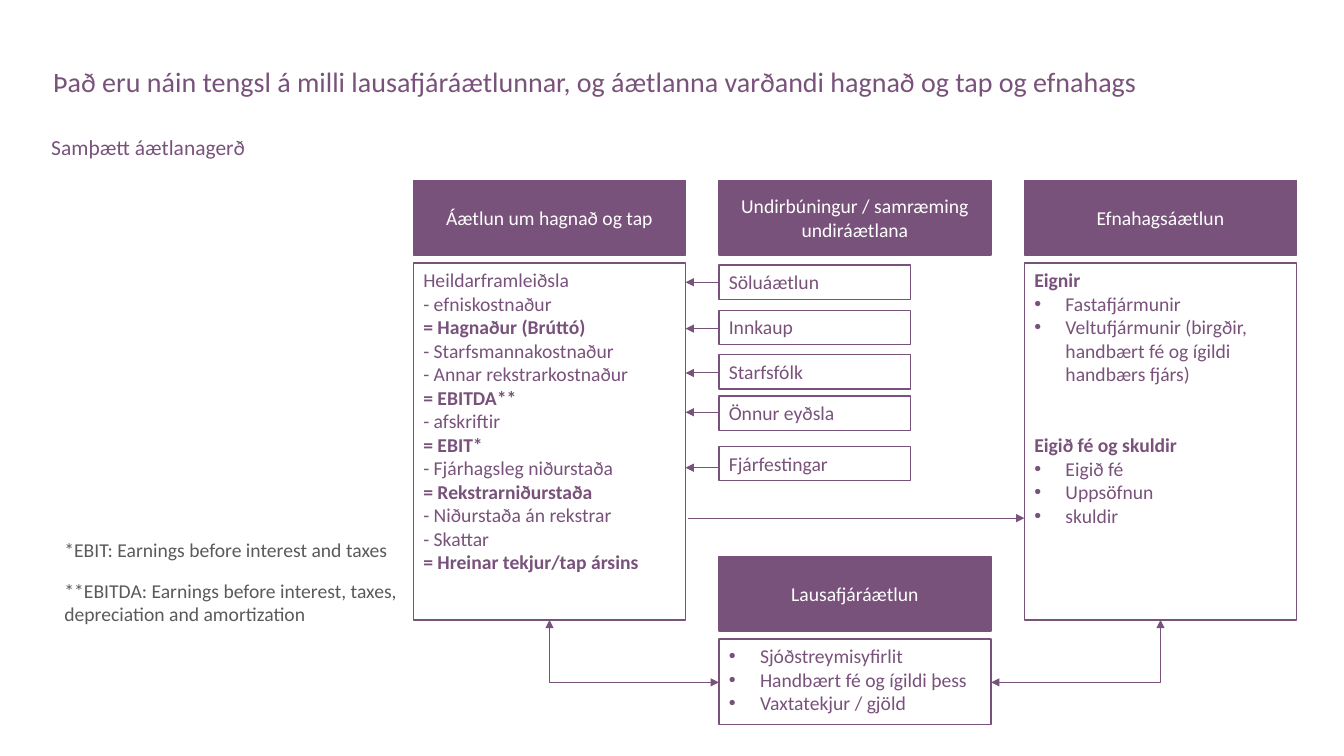
import pptx
import pptx.dml.color
import pptx.enum.shapes
import pptx.enum.text
import pptx.oxml
import pptx.oxml.ns
import pptx.util
from pptx.util import Inches

COLOURS = {"plum": "79527B", "white": "FFFFFF", "grey": "595A59"}
FONT = "Calibri"
qn = pptx.oxml.ns.qn


def colour(name):
    return pptx.dml.color.RGBColor.from_string(COLOURS[name])


def add_child(parent, tag, **attributes):
    child = parent.makeelement(qn(tag), attributes)
    parent.append(child)
    return child


def write(para, text, size=14, ink="plum", bold=False, bullet=False,
          align=None, before=None, spacing=None):
    """Fill one paragraph with text in the given format."""
    if bullet:
        props = para._p.get_or_add_pPr()
        props.set("marL", str(Inches(0.31)))
        props.set("indent", str(Inches(-0.31)))
        add_child(add_child(props, "a:buClr"), "a:srgbClr", val=COLOURS[ink])
        add_child(props, "a:buFont", typeface="Arial")
        add_child(props, "a:buChar", char="•")
    if align is not None:
        para.alignment = align
    if before is not None:
        para.space_before = pptx.util.Pt(before)
    if spacing is not None:
        para.line_spacing = spacing
    span = para.add_run()
    span.text = text
    span.font.name = FONT
    span.font.size = pptx.util.Pt(size)
    span.font.bold = bold
    span.font.color.rgb = colour(ink)


class PlanSlide:
    def __init__(self, deck):
        self.page = deck.slides.add_slide(deck.slide_layouts[6])

    def fill_frame(self, frame, lines, anchor, **style):
        """Each line is (text, format changes)."""
        frame.word_wrap = True
        frame.vertical_anchor = anchor
        for index, (text, changes) in enumerate(lines):
            para = frame.add_paragraph() if index else frame.paragraphs[0]
            write(para, text, **{**style, **changes})

    def text(self, left, top, width, height, lines, **style):
        box = self.page.shapes.add_textbox(
            Inches(left), Inches(top), Inches(width), Inches(height))
        self.fill_frame(box.text_frame, lines,
                        pptx.enum.text.MSO_ANCHOR.TOP, **style)

    def box(self, left, top, width, height, lines, fill="white",
            anchor=pptx.enum.text.MSO_ANCHOR.TOP,
            align=pptx.enum.text.PP_ALIGN.LEFT, **style):
        box = self.page.shapes.add_shape(
            pptx.enum.shapes.MSO_SHAPE.RECTANGLE,
            Inches(left), Inches(top), Inches(width), Inches(height))
        box.shadow.inherit = False
        box.fill.solid()
        box.fill.fore_color.rgb = colour(fill)
        box.line.color.rgb = colour("plum")
        box.line.width = pptx.util.Pt(1)
        self.fill_frame(box.text_frame, lines, anchor, align=align, **style)

    def header(self, left, top, title):
        self.box(left, top, COLUMN_WIDTH, 0.74, [(title, {})], fill="plum",
                 anchor=pptx.enum.text.MSO_ANCHOR.MIDDLE,
                 align=pptx.enum.text.PP_ALIGN.CENTER, ink="white")

    def arrow(self, start, end, bent=False):
        """A one-way straight arrow, or a two-way arrow with one corner."""
        kinds = pptx.enum.shapes.MSO_CONNECTOR
        arrow = self.page.shapes.add_connector(
            kinds.ELBOW if bent else kinds.STRAIGHT,
            *map(Inches, start + end))
        arrow.line.color.rgb = colour("plum")
        arrow.line.width = pptx.util.Pt(0.75)
        props = arrow._element.spPr
        outline = props.find(qn("a:ln"))
        if bent:
            props.find(qn("a:prstGeom")).set("prst", "bentConnector2")
            add_child(outline, "a:headEnd", type="triangle")
        add_child(outline, "a:tailEnd", type="triangle")
        add_child(props, "a:effectLst")


COLUMN_WIDTH = 2.7
PROFIT_X, PREPARE_X, BALANCE_X = [4.1 + 3.03 * column for column in range(3)]
HEADER_Y, BODY_Y, BODY_HEIGHT = 1.79, 2.61, 3.54
PLAIN, BOLD, BULLET = {}, {"bold": True}, {"bullet": True}

PROFIT_LINES = [
    "Heildarframleiðsla", "- efniskostnaður", "= Hagnaður (Brúttó)",
    "- Starfsmannakostnaður", "- Annar rekstrarkostnaður", "= EBITDA**",
    "- afskriftir", "= EBIT*", "- Fjárhagsleg niðurstaða",
    "= Rekstrarniðurstaða", "- Niðurstaða án rekstrar", "- Skattar",
    "= Hreinar tekjur/tap ársins",
]
BALANCE_LINES = [
    ("Eignir", BOLD),
    ("Fastafjármunir", BULLET),
    ("Veltufjármunir (birgðir, handbært fé og ígildi handbærs fjárs)", BULLET),
    ("Eigið fé og skuldir", {"bold": True, "before": 34}),
    ("Eigið fé", BULLET),
    ("Uppsöfnun", BULLET),
    ("skuldir", BULLET),
]
CASH_LINES = ["Sjóðstreymisyfirlit", "Handbært fé og ígildi þess",
              "Vaxtatekjur / gjöld"]
# Name, top of box, height of arrow
SUB_PLANS = [
    ("Söluáætlun", 2.63, 2.8),
    ("Innkaup", 3.08, 3.26),
    ("Starfsfólk", 3.52, 3.7),
    ("Önnur eyðsla", 3.93, 4.09),
    ("Fjárfestingar", 4.43, 4.64),
]


def main():
    deck = pptx.Presentation()
    deck.slide_width, deck.slide_height = Inches(13.33), Inches(7.5)
    slide = PlanSlide(deck)

    # Title and subtitle
    slide.text(0.43, 0.63, 12.54, 0.64, [(
        "Það eru náin tengsl á milli lausafjáráætlunnar, og áætlanna "
        "varðandi hagnað og tap og efnahags", PLAIN)], size=20, spacing=0.9)
    slide.text(0.41, 1.35, 12.56, 0.28, [("Samþætt áætlanagerð", PLAIN)],
               size=15.3, spacing=0.7)

    # Headers
    slide.header(PROFIT_X, HEADER_Y, "Áætlun um hagnað og tap")
    slide.header(PREPARE_X, HEADER_Y, "Undirbúningur / samræming undiráætlana")
    slide.header(BALANCE_X, HEADER_Y, "Efnahagsáætlun")
    slide.header(PREPARE_X, 5.52, "Lausafjáráætlun")

    # Plan contents
    slide.box(PROFIT_X, BODY_Y, COLUMN_WIDTH, BODY_HEIGHT,
              [(line, BOLD if line.startswith("=") else PLAIN)
               for line in PROFIT_LINES])
    slide.box(BALANCE_X, BODY_Y, COLUMN_WIDTH, BODY_HEIGHT, BALANCE_LINES)
    slide.box(PREPARE_X, 6.34, COLUMN_WIDTH, 0.85,
              [(line, BULLET) for line in CASH_LINES])

    # Sub-plans feeding the profit plan
    profit_right = PROFIT_X + COLUMN_WIDTH
    for name, top, arrow_y in SUB_PLANS:
        slide.box(PREPARE_X, top, 1.9, 0.34, [(name, PLAIN)])
        slide.arrow((PREPARE_X, arrow_y), (profit_right, arrow_y))

    # Links between the plans
    body_bottom, cash_y = BODY_Y + BODY_HEIGHT, 6.77
    slide.arrow((6.82, 5.14), (BALANCE_X, 5.14))
    slide.arrow((PREPARE_X, cash_y),
                (PROFIT_X + COLUMN_WIDTH / 2, body_bottom), bent=True)
    slide.arrow((PREPARE_X + COLUMN_WIDTH, cash_y),
                (BALANCE_X + COLUMN_WIDTH / 2, body_bottom), bent=True)

    # Footnotes
    slide.text(0.54, 5.29, 3.55, 1.38, [
        ("*EBIT: Earnings before interest and taxes", PLAIN),
        ("**EBITDA: Earnings before interest, taxes, depreciation and "
         "amortization", {"before": 12})], ink="grey")

    deck.save("out.pptx")


if __name__ == "__main__":
    main()
